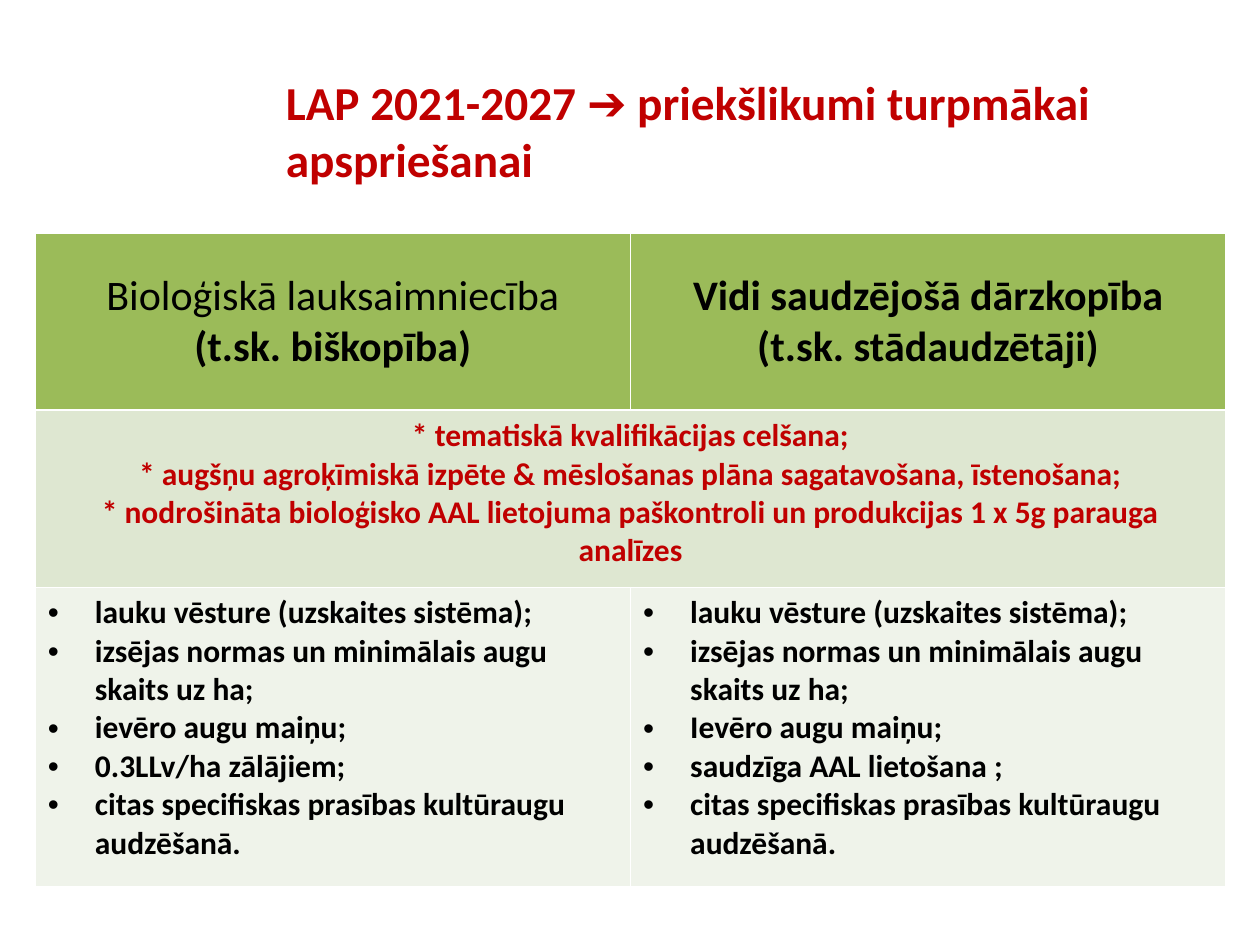
from lxml.etree import SubElement
from pptx import Presentation
from pptx.dml.color import RGBColor as RGB
from pptx.enum.text import MSO_ANCHOR as ANCHOR, PP_ALIGN as ALIGN
from pptx.oxml import parse_xml
from pptx.oxml.ns import nsdecls, qn
from pptx.util import Cm, Pt

COLORS = {"red": "C00000", "black": "000000", "white": "FFFFFF",
          "header": "9BBB59", "shared": "DEE7D1", "rules": "EFF3EA"}
FONT = "Calibri"


def format_text(tf, size, color, align, bold=True):
    for p in tf.paragraphs:
        p.alignment = align
        for r in p.runs:
            r.font.name, r.font.size, r.font.bold = FONT, Pt(size), bold
            r.font.color.rgb = RGB.from_string(COLORS[color])


def style_cell(cell, fill):
    """Fill the cell and put a thin white line on its four sides."""
    cell.fill.solid()
    cell.fill.fore_color.rgb = RGB.from_string(COLORS[fill])
    for i, side in enumerate(("lnL", "lnR", "lnT", "lnB")):
        line = parse_xml(
            f'<a:{side} {nsdecls("a")} w="{Pt(1)}"><a:solidFill>'
            f'<a:srgbClr val="{COLORS["white"]}"/></a:solidFill></a:{side}>')
        cell._tc.get_or_add_tcPr().insert(i, line)


prs = Presentation()
prs.slide_width, prs.slide_height = Cm(25.4), Cm(19.05)
s = prs.slides.add_slide(prs.slide_layouts[5])

# Title
title = s.shapes.title
title.left, title.top, title.width, title.height = Cm(5.51), Cm(1.12), Cm(19.28), Cm(3)
tf = title.text_frame
tf.text = "LAP 2021-2027 ➔ priekšlikumi turpmākai apspriešanai"
tf.word_wrap = True
tf.vertical_anchor = ANCHOR.MIDDLE
format_text(tf, 27, "red", ALIGN.LEFT)

# Table
headers = ["Bioloģiskā lauksaimniecība\n(t.sk. biškopība)",
           "Vidi saudzējošā dārzkopība\n(t.sk. stādaudzētāji)"]
shared = ["* tematiskā kvalifikācijas celšana;",
          "* augšņu agroķīmiskā izpēte & mēslošanas plāna sagatavošana, īstenošana;",
          "* nodrošināta bioloģisko AAL lietojuma paškontroli un produkcijas "
          "1 x 5g parauga analīzes"]
first_rules = ["lauku vēsture (uzskaites sistēma);",
               "izsējas normas un minimālais augu skaits uz ha;"]
last_rule = "citas specifiskas prasības kultūraugu audzēšanā."
rules = [["ievēro augu maiņu;", "0.3LLv/ha zālājiem;"],
         ["Ievēro augu maiņu;", "saudzīga AAL lietošana ;"]]

row_heights = [Cm(3.57), Cm(3.57), Cm(6.04)]
table = s.shapes.add_table(3, 2, Cm(0.71), Cm(4.7), Cm(24), sum(row_heights)).table
for row, height, fill in zip(table.rows, row_heights, ("header", "shared", "rules")):
    row.height = height
    for cell in row.cells:
        style_cell(cell, fill)

for col, header in enumerate(headers):
    cell = table.cell(0, col)
    cell.text_frame.text = header
    cell.vertical_anchor = ANCHOR.MIDDLE
    format_text(cell.text_frame, 24, "black", ALIGN.CENTER)
table.cell(0, 0).text_frame.paragraphs[0].runs[0].font.bold = False

cell = table.cell(1, 0)
cell.merge(table.cell(1, 1))
cell.text_frame.text = "\n".join(shared)
format_text(cell.text_frame, 18, "red", ALIGN.CENTER)

for col, own_rules in enumerate(rules):
    tf = table.cell(2, col).text_frame
    tf.text = "\n".join([*first_rules, *own_rules, last_rule])
    format_text(tf, 18, "black", ALIGN.LEFT)
    for p in tf.paragraphs:
        pPr = p._p.get_or_add_pPr()
        pPr.set("marL", str(Cm(0.95)))
        pPr.set("indent", str(-Cm(0.95)))
        SubElement(pPr, qn("a:buFont"), typeface="Arial")
        SubElement(pPr, qn("a:buChar"), char="•")

prs.save("out.pptx")
